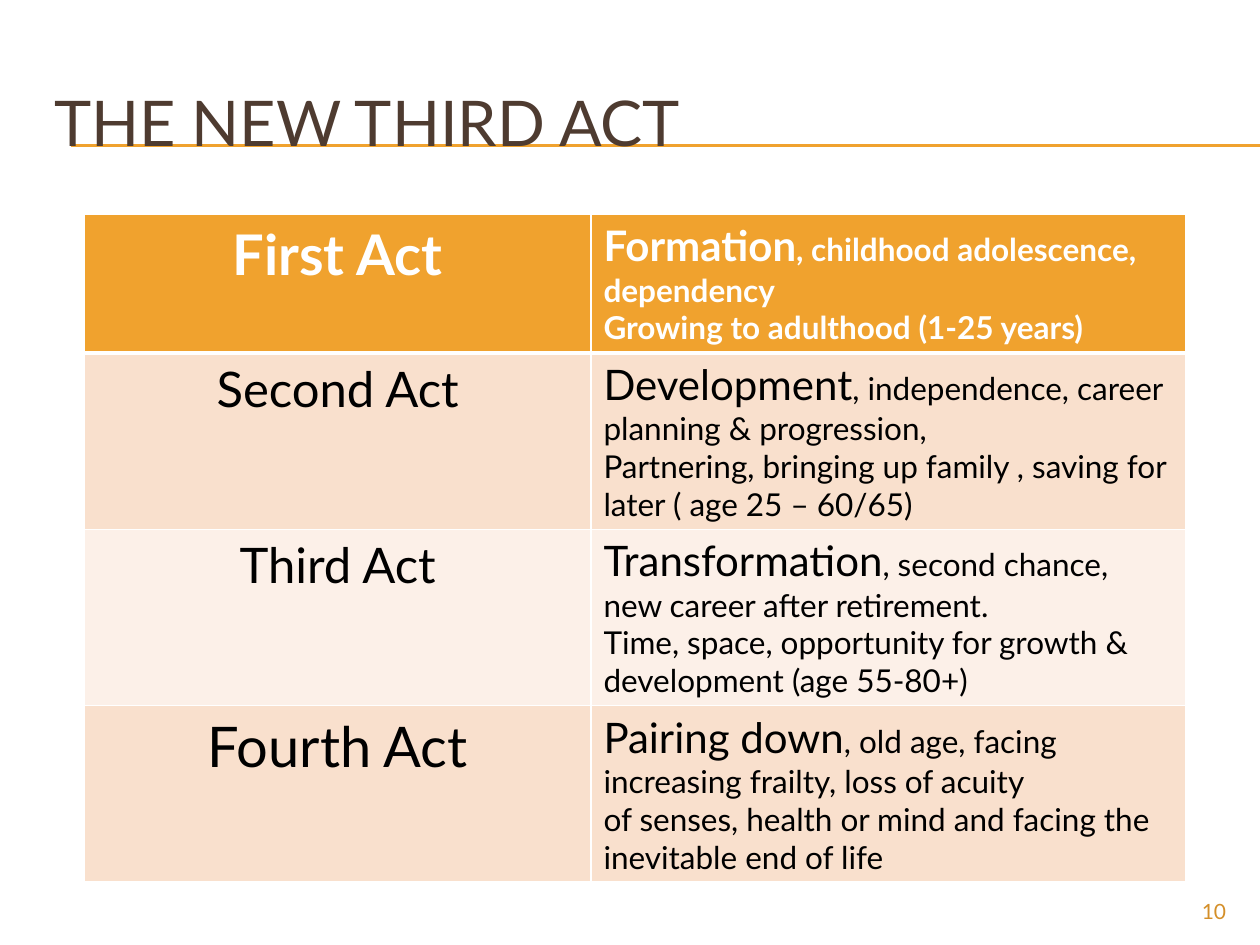
"""Build the slide that describes the four acts of life in a table."""
from dataclasses import dataclass

from lxml.etree import SubElement
from pptx import Presentation
from pptx.dml.color import RGBColor
from pptx.enum.shapes import MSO_CONNECTOR as Connector
from pptx.enum.text import MSO_ANCHOR as Anchor, MSO_AUTO_SIZE as AutoSize, PP_ALIGN as Align
from pptx.oxml.ns import qn
from pptx.util import Inches, Pt

WHITE = RGBColor(0xFF, 0xFF, 0xFF)
BLACK = RGBColor(0x00, 0x00, 0x00)
ORANGE = RGBColor(0xF0, 0xA2, 0x2E)
DARK_ORANGE = RGBColor(0xD4, 0x8F, 0x29)
BROWN = RGBColor(0x4E, 0x3B, 0x30)
PEACH = RGBColor(0xF9, 0xE0, 0xCD)
PALE_PEACH = RGBColor(0xFC, 0xF0, 0xE8)

SLIDE_WIDTH, SLIDE_HEIGHT = 10, 7.5
COLUMN_WIDTHS = (4.02, 4.72)
HEADER_HEIGHT, BODY_HEIGHT = 1.06, 1.38


@dataclass(frozen=True)
class Act:
    name: str
    name_size: int
    theme: str
    details: str
    closing: str


ACTS = (
    Act("First Act", 32, "Formation", ", childhood adolescence, dependency",
        "Growing to adulthood (1-25 years)"),
    Act("Second Act", 28, "Development", ", independence, career planning & progression,",
        "Partnering, bringing up family , saving for later ( age 25 – 60/65)"),
    Act("Third Act", 28, "Transformation", ", second chance, new career after retirement.",
        "Time, space, opportunity for growth & development (age 55-80+)"),
    Act("Fourth Act", 32, "Pairing down", ", old age, facing increasing frailty, loss of acuity",
        "of senses, health or mind and facing the inevitable end of life"),
)


def add_run(paragraph, text: str, size: float, color: RGBColor, bold: bool = False) -> None:
    run = paragraph.add_run()
    run.text = text
    for name, value in {"name": "Lato", "size": Pt(size), "bold": bold}.items():
        setattr(run.font, name, value)
    run.font.color.rgb = color


def place(shape, left: float, top: float, width: float, height: float) -> None:
    box = {"left": left, "top": top, "width": width, "height": height}
    for name, value in box.items():
        setattr(shape, name, Inches(value))


def add_rule(slide, top: float) -> None:
    rule = slide.shapes.add_connector(
        Connector.STRAIGHT, Inches(0.56), Inches(top), Inches(SLIDE_WIDTH), Inches(top))
    rule.line.color.rgb = ORANGE
    rule.line.width = Pt(0.75)
    SubElement(rule.element.spPr, qn("a:effectLst"))


def format_title(title) -> None:
    place(title, 0.33, 0.5, 9.5, 0.92)
    frame = title.text_frame
    frame_format = {"auto_size": AutoSize.NONE, "vertical_anchor": Anchor.MIDDLE, "word_wrap": True}
    for name, value in frame_format.items():
        setattr(frame, name, value)
    frame.paragraphs[0].alignment = Align.LEFT
    add_run(frame.paragraphs[0], "THE NEW THIRD ACT", 36, BROWN)
    title.element.getparent().append(title.element)


def add_page_number(slide) -> None:
    box = slide.shapes.add_textbox(0, 0, 0, 0)
    place(box, 9, 7.08, 0.83, 0.27)
    box.text_frame.word_wrap = True
    paragraph = box.text_frame.paragraphs[0]
    paragraph.alignment = Align.RIGHT
    add_run(paragraph, "10", 12, DARK_ORANGE)


def format_cell(cell, fill: RGBColor, borders: dict[str, float]) -> None:
    properties = cell._tc.get_or_add_tcPr()
    for side, width in borders.items():
        line = SubElement(properties, qn(f"a:ln{side}"), w=str(Pt(width)))
        SubElement(SubElement(line, qn("a:solidFill")), qn("a:srgbClr"), val=str(WHITE))
    cell.fill.solid()
    cell.fill.fore_color.rgb = fill


def fill_row(cells, index: int, act: Act) -> None:
    header = index == 0
    color = WHITE if header else BLACK
    fill = ORANGE if header else (PALE_PEACH, PEACH)[index % 2]
    borders = {"L": 1, "R": 1, "T": 3 if index == 1 else 1, "B": 3 if header else 1}
    for cell in cells:
        format_cell(cell, fill, borders)
    name_cell, story_cell = cells
    name = name_cell.text_frame.paragraphs[0]
    name.alignment = Align.CENTER
    add_run(name, act.name, act.name_size, color, header)
    story = story_cell.text_frame
    add_run(story.paragraphs[0], act.theme, 24, color, header)
    add_run(story.paragraphs[0], act.details, 18, color, header)
    add_run(story.add_paragraph(), act.closing, 18, color, header)


def add_acts_table(slide) -> None:
    heights = [HEADER_HEIGHT] + [BODY_HEIGHT] * (len(ACTS) - 1)
    table = slide.shapes.add_table(
        len(ACTS), len(COLUMN_WIDTHS), Inches(0.67), Inches(1.7),
        Inches(sum(COLUMN_WIDTHS)), Inches(sum(heights))).table
    for column, width in zip(table.columns, COLUMN_WIDTHS):
        column.width = Inches(width)
    for index, (row, height, act) in enumerate(zip(table.rows, heights, ACTS)):
        row.height = Inches(height)
        fill_row(tuple(row.cells), index, act)


def main() -> None:
    presentation = Presentation()
    presentation.slide_width = Inches(SLIDE_WIDTH)
    presentation.slide_height = Inches(SLIDE_HEIGHT)
    slide = presentation.slides.add_slide(presentation.slide_layouts[5])
    for top in (1.15, 1.16):
        add_rule(slide, top)
    format_title(slide.shapes.title)
    add_page_number(slide)
    add_acts_table(slide)
    presentation.save("out.pptx")


if __name__ == "__main__":
    main()
